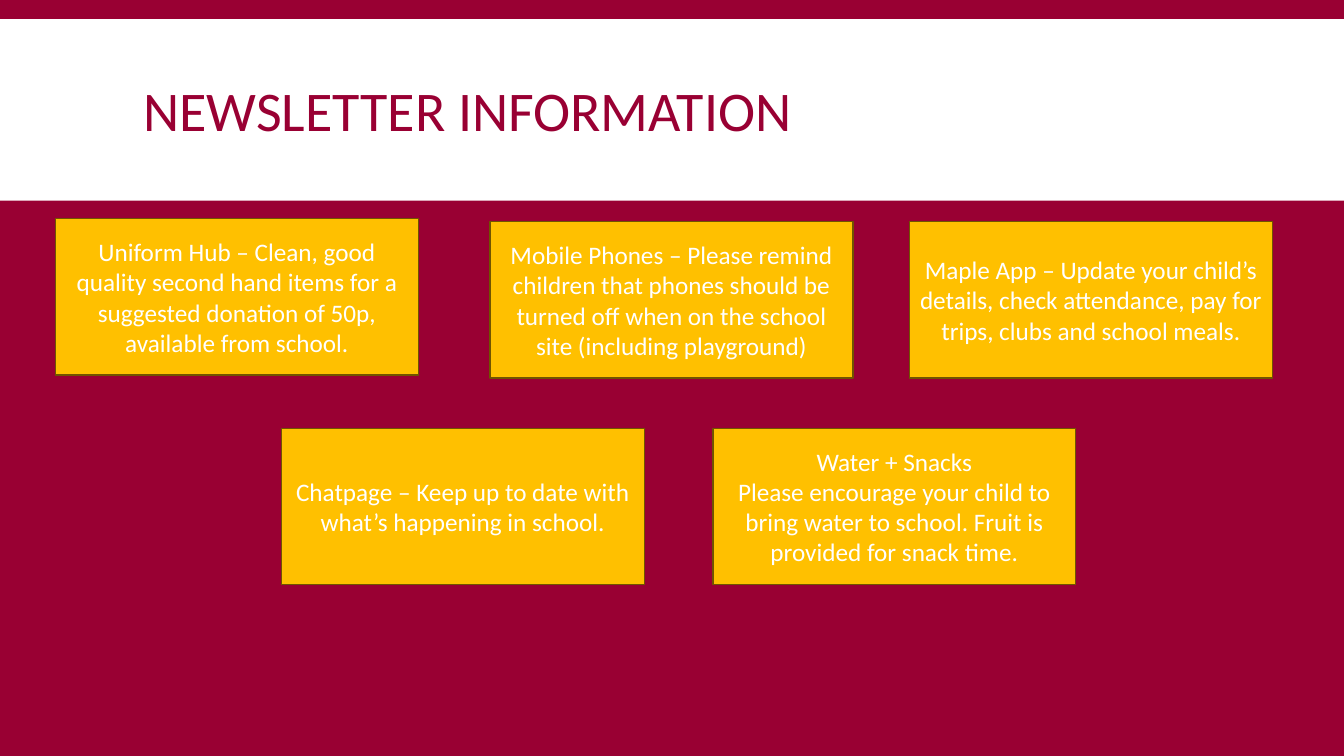
from pptx import Presentation
from pptx.dml.color import RGBColor
from pptx.enum.shapes import MSO_SHAPE
from pptx.enum.text import MSO_ANCHOR, MSO_AUTO_SIZE, PP_ALIGN
from pptx.util import Pt

RECTANGLE = MSO_SHAPE.RECTANGLE
MIDDLE = MSO_ANCHOR.MIDDLE
NO_AUTOFIT = MSO_AUTO_SIZE.NONE
LEFT, CENTER = PP_ALIGN.LEFT, PP_ALIGN.CENTER

EMU_PER_PX = 9144
TITLE_ONLY = 5
FONT = "Calibri"
COLORS = {
    "maroon": "990033",
    "white": "FFFFFF",
    "gold": "FFC000",
    "brown": "705400",
}
NOTICE_WIDTH, NOTICE_HEIGHT = 360, 155
NOTICES = [
    (55, 217, ["Uniform Hub – Clean, good quality second hand items for a "
               "suggested donation of 50p, available from school."]),
    (486, 220, ["Mobile Phones – Please remind children that phones should be "
                "turned off when on the school site (including playground)"]),
    (902, 220, ["Maple App – Update your child’s details, check attendance, "
                "pay for trips, clubs and school meals."]),
    (279, 425, ["Chatpage – Keep up to date with what’s happening in school."]),
    (707, 425, ["Water + Snacks",
                "Please encourage your child to bring water to school. "
                "Fruit is provided for snack time."]),
]


def px(length):
    return length * EMU_PER_PX


def color(name):
    return RGBColor.from_string(COLORS[name])


class NewsletterSlide:
    def __init__(self, deck):
        self.slide = deck.slides.add_slide(deck.slide_layouts[TITLE_ONLY])
        background = self.slide.background.fill
        background.solid()
        background.fore_color.rgb = color("maroon")

    def add_lines(self, frame, lines, size, ink, align, spacing=None):
        frame.word_wrap = True
        frame.auto_size = NO_AUTOFIT
        frame.vertical_anchor = MIDDLE
        for index, line in enumerate(lines):
            paragraph = frame.add_paragraph() if index else frame.paragraphs[0]
            paragraph.alignment = align
            paragraph.line_spacing = spacing
            run = paragraph.add_run()
            run.text = line
            run.font.name = FONT
            run.font.size = Pt(size)
            run.font.color.rgb = color(ink)

    def box(self, left, top, width, height, fill, outline=None):
        panel = self.slide.shapes.add_shape(
            RECTANGLE, px(left), px(top), px(width), px(height))
        panel.shadow.inherit = False
        panel.fill.solid()
        panel.fill.fore_color.rgb = color(fill)
        if outline:
            panel.line.color.rgb = color(outline)
            panel.line.width = Pt(1)
        else:
            panel.line.fill.background()
        return panel

    def title(self, text, left, top, width, height):
        heading = self.slide.shapes.title
        heading.left, heading.top = px(left), px(top)
        heading.width, heading.height = px(width), px(height)
        self.add_lines(heading.text_frame, [text], 40, "maroon", LEFT, 0.85)
        return heading

    def notice(self, left, top, lines):
        card = self.box(left, top, NOTICE_WIDTH, NOTICE_HEIGHT, "gold", "brown")
        self.add_lines(card.text_frame, lines, 18, "white", CENTER)


def main():
    deck = Presentation()
    deck.slide_width, deck.slide_height = px(1333), px(750)
    newsletter = NewsletterSlide(deck)
    title_band = newsletter.box(0, 19, 1333, 180, "white")
    heading = newsletter.title("NEWSLETTER INFORMATION", 132, 31, 1070, 165)
    heading.element.addprevious(title_band.element)
    for left, top, lines in NOTICES:
        newsletter.notice(left, top, lines)
    deck.save("out.pptx")


if __name__ == "__main__":
    main()
